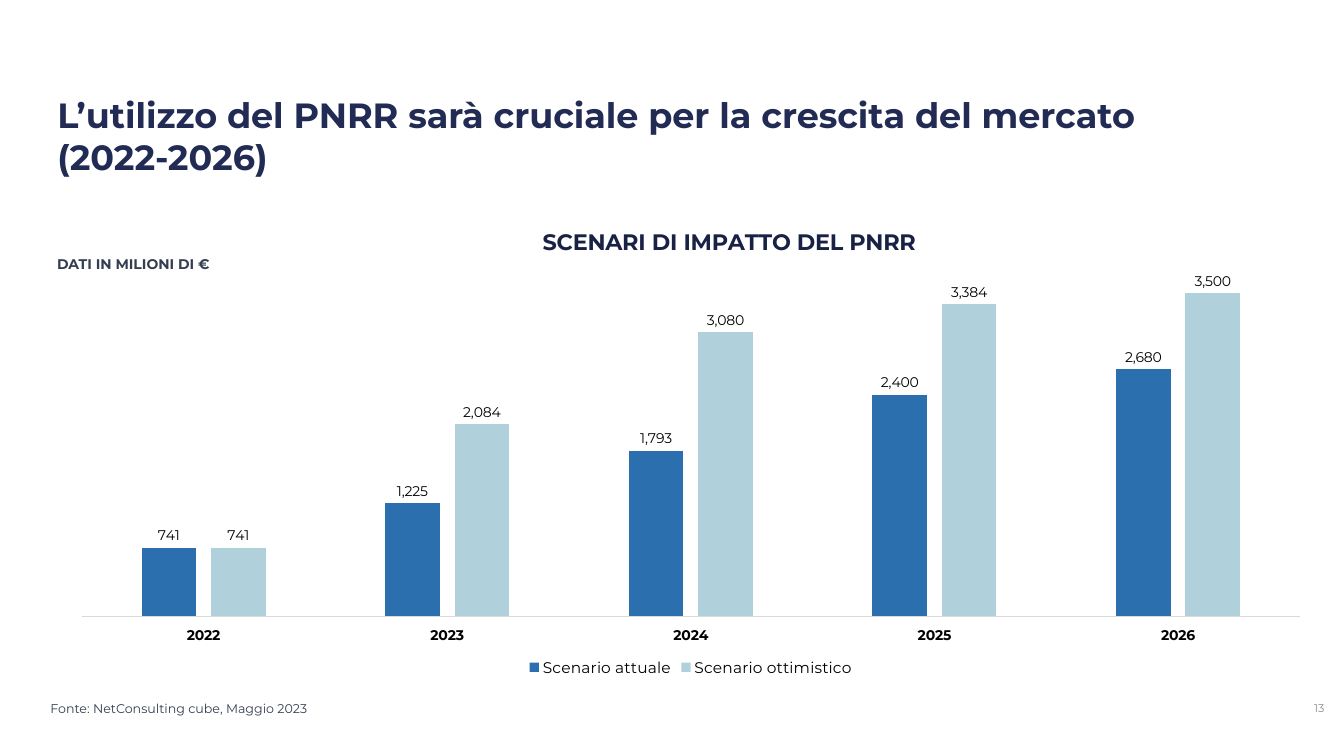
from dataclasses import dataclass

from lxml.etree import SubElement
from pptx import Presentation
from pptx.chart.data import CategoryChartData
from pptx.dml.color import RGBColor
from pptx.enum.chart import XL_CHART_TYPE as ChartType
from pptx.enum.chart import XL_LABEL_POSITION as LabelPosition
from pptx.enum.chart import XL_LEGEND_POSITION as LegendPosition
from pptx.enum.chart import XL_TICK_LABEL_POSITION as TickLabels
from pptx.enum.chart import XL_TICK_MARK as TickMark
from pptx.enum.text import MSO_ANCHOR as Anchor
from pptx.enum.text import MSO_AUTO_SIZE as AutoSize
from pptx.enum.text import PP_ALIGN as Align
from pptx.oxml.ns import qn
from pptx.util import Cm, Pt


@dataclass(frozen=True)
class Theme:
    face: str = "Montserrat"
    heading: str = "222B54"
    chart_heading: str = "192145"
    note: str = "333F50"
    page: str = "8C8C8C"
    chart_text: str = "000000"
    axis: str = "D9D9D9"
    current: str = "2C6FAE"
    optimistic: str = "B0D1DC"
    heading_size: float = 25
    chart_heading_size: float = 16
    legend_size: float = 11
    label_size: float = 10
    source_size: float = 9
    page_size: float = 8


THEME = Theme()
YEARS = ["2022", "2023", "2024", "2025", "2026"]
SCENARIOS = [
    ("Scenario attuale", THEME.current, [741, 1225, 1793, 2400, 2680]),
    ("Scenario ottimistico", THEME.optimistic, [741, 2084, 3080, 3384, 3500]),
]


def set_attributes(target, values):
    for name, value in values.items():
        setattr(target, name, value)


def format_font(font, size, color, bold=False):
    set_attributes(font, {"name": THEME.face, "size": Pt(size), "bold": bold})
    font.color.rgb = RGBColor.from_string(color)


def write_text(box, place, text, size, color, bold=False,
               align=Align.LEFT, anchor=Anchor.TOP):
    """Place a placeholder or text box and fill it with one formatted paragraph."""
    set_attributes(box, dict(zip(("left", "top", "width", "height"), map(Cm, place))))
    frame = box.text_frame
    set_attributes(frame, {"text": text, "word_wrap": True,
                           "auto_size": AutoSize.NONE, "vertical_anchor": anchor})
    paragraph = frame.paragraphs[0]
    set_attributes(paragraph, {"alignment": align, "line_spacing": 1.0})
    format_font(paragraph.runs[0].font, size, color, bold)


def add_note(slide, place, *content, **style):
    write_text(slide.shapes.add_textbox(0, 0, 0, 0), place, *content, **style)


def set_layout(parent, index, settings):
    """Give a chart part a manual layout, in fractions of the chart area."""
    for old in parent.findall(qn("c:layout")):
        parent.remove(old)
    layout = SubElement(parent, qn("c:layout"))
    manual = SubElement(layout, qn("c:manualLayout"))
    for tag, value in settings.items():
        SubElement(manual, qn(f"c:{tag}")).set("val", str(value))
    parent.insert(index, layout)


def format_axes(chart):
    years = chart.category_axis
    set_attributes(years, {"major_tick_mark": TickMark.NONE,
                           "minor_tick_mark": TickMark.NONE,
                           "tick_label_position": TickLabels.LOW,
                           "has_major_gridlines": False})
    format_font(years.tick_labels.font, THEME.label_size, THEME.chart_text, bold=True)
    years.format.line.color.rgb = RGBColor.from_string(THEME.axis)
    years.format.line.width = Pt(0.75)
    set_attributes(chart.value_axis, {"visible": False, "has_major_gridlines": False,
                                      "minimum_scale": 0, "maximum_scale": 4000})


def format_columns(plot):
    set_attributes(plot, {"gap_width": 219, "overlap": -27, "vary_by_categories": False})
    for series, (_, color, _) in zip(plot.series, SCENARIOS):
        series.format.fill.solid()
        series.format.fill.fore_color.rgb = RGBColor.from_string(color)
        labels = series.data_labels
        set_attributes(labels, {"show_value": True, "number_format": "#,000",
                                "number_format_is_linked": False,
                                "position": LabelPosition.OUTSIDE_END})
        format_font(labels.font, THEME.label_size, THEME.chart_text)


def add_scenario_chart(slide, place, heading):
    scenarios = CategoryChartData()
    scenarios.categories = YEARS
    for name, _, values in SCENARIOS:
        scenarios.add_series(name, values)
    chart = slide.shapes.add_chart(
        ChartType.COLUMN_CLUSTERED, *map(Cm, place), scenarios).chart
    format_font(chart.font, THEME.label_size, THEME.chart_text)

    set_attributes(chart, {"has_title": True, "has_legend": True})
    title = chart.chart_title
    title.text_frame.text = heading
    format_font(title.text_frame.paragraphs[0].runs[0].font,
                THEME.chart_heading_size, THEME.chart_heading, bold=True)
    set_layout(title.element, 1, {"xMode": "edge", "yMode": "edge", "x": 0.38, "y": 0.08})

    set_attributes(chart.legend, {"position": LegendPosition.BOTTOM,
                                  "include_in_layout": False})
    format_font(chart.legend.font, THEME.legend_size, THEME.chart_text)

    plot_area = chart.element.find(f".//{qn('c:plotArea')}")
    set_layout(plot_area, 0, {"layoutTarget": "inner", "xMode": "edge", "yMode": "edge",
                              "x": 0.02, "y": 0.13, "w": 0.96, "h": 0.74})
    format_axes(chart)
    format_columns(chart.plots[0])


def main():
    deck = Presentation()
    set_attributes(deck, {"slide_width": Cm(33.87), "slide_height": Cm(19.05)})
    slide = deck.slides.add_slide(deck.slide_layouts.get_by_name("Title Only"))

    write_text(slide.shapes.title, (1.19, 2.24, 27.86, 2.39),
               "L’utilizzo del PNRR sarà cruciale per la crescita del mercato (2022-2026)",
               THEME.heading_size, THEME.heading, bold=True)
    add_note(slide, (1.02, 17.53, 11.7, 0.64), "Fonte: NetConsulting cube, Maggio 2023",
             THEME.source_size, THEME.note)
    add_scenario_chart(slide, (1.42, 4.6, 31.98, 12.57), "SCENARI DI IMPATTO DEL PNRR")
    add_note(slide, (1.19, 6.32, 4.85, 1.12), "DATI IN MILIONI DI €",
             THEME.label_size, THEME.note, bold=True)
    add_note(slide, (31.78, 17.32, 1.85, 1.02), "13", THEME.page_size, THEME.page,
             align=Align.RIGHT, anchor=Anchor.MIDDLE)

    deck.save("out.pptx")


if __name__ == "__main__":
    main()
